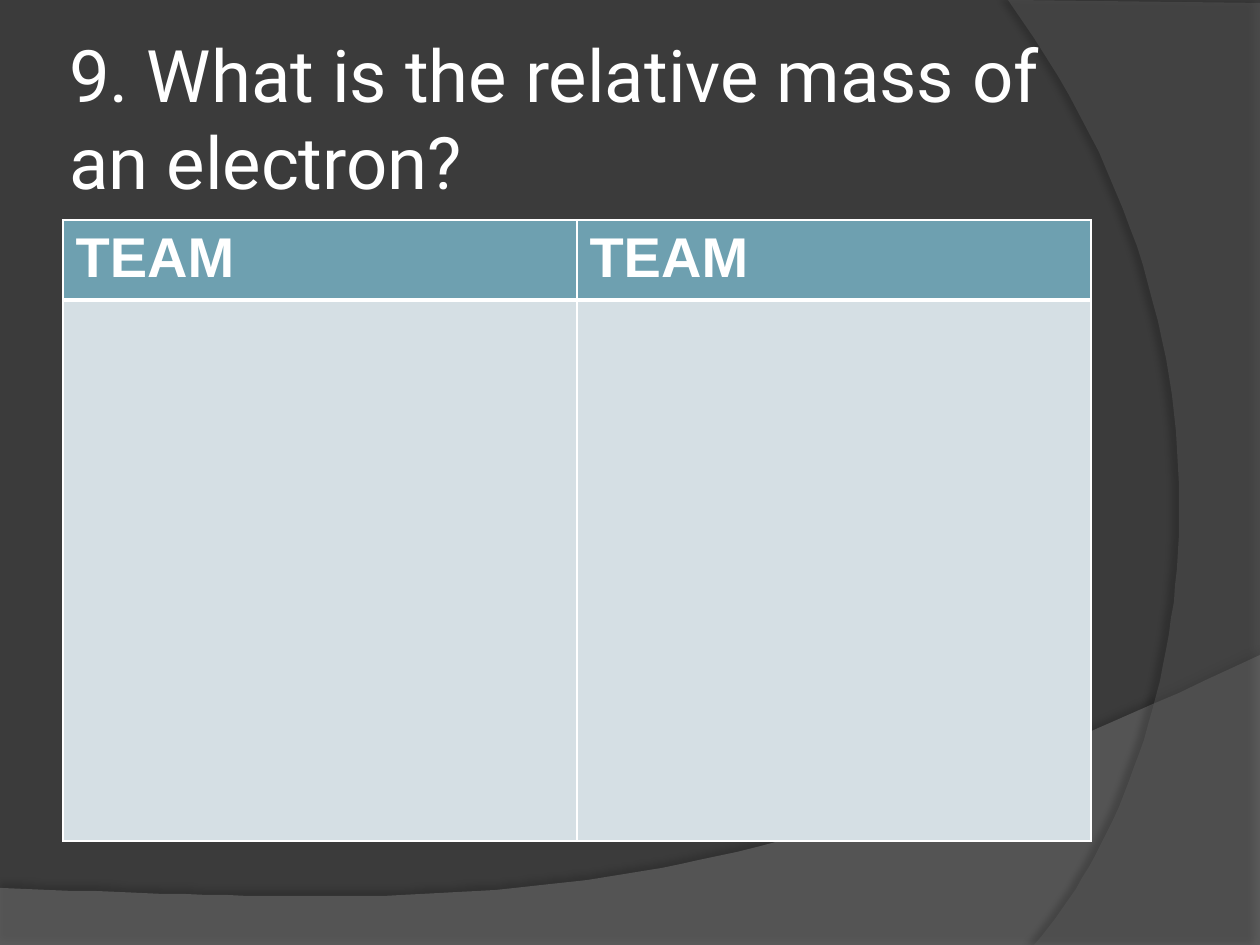
from dataclasses import dataclass

from lxml import etree
from pptx import Presentation
from pptx import util as u
from pptx.dml.color import RGBColor
from pptx.enum import text
from pptx.oxml import ns

EMU_PER_PX = 914400 / 126


@dataclass(frozen=True)
class Theme:
    background: str = "3B3B3B"
    wave: str = "7F7F7F"
    arc: str = "5E5E5E"
    shadow: str = "000000"
    white: str = "FFFFFF"
    header: str = "6EA0B0"
    body: str = "D5DFE4"
    title_font: str = "Roboto"
    table_font: str = "Arial"
    title_size: float = 41.4
    header_size: float = 32


THEME = Theme()


def px(length):
    return u.Emu(round(length * EMU_PER_PX))


def paint(fill, color):
    fill.solid()
    fill.fore_color.rgb = RGBColor.from_string(color)


def add_color(parent, color, alpha=100):
    element = etree.SubElement(parent, ns.qn("a:srgbClr"), val=color)
    etree.SubElement(element, ns.qn("a:alpha"), val=str(alpha * 1000))


def style_paragraph(paragraph, font_name, size, bold=False):
    font = paragraph.font
    font.name = font_name
    font.size = u.Pt(size)
    font.bold = bold
    font.color.rgb = RGBColor.from_string(THEME.white)


def bezier(start, control_1, control_2, end, steps=60):
    points = []
    for step in range(steps + 1):
        t = step / steps
        weights = ((1 - t) ** 3, 3 * t * (1 - t) ** 2, 3 * t ** 2 * (1 - t), t ** 3)
        corners = (start, control_1, control_2, end)
        points.append(tuple(
            round(sum(w * corner[axis] for w, corner in zip(weights, corners)), 2)
            for axis in (0, 1)
        ))
    return points


def add_backdrop(slide, points, color, alpha, shadow_alpha, distance, angle):
    builder = slide.shapes.build_freeform(*points[0], scale=EMU_PER_PX)
    builder.add_line_segments(points[1:], close=True)
    shape = builder.convert_to_shape()
    paint(shape.fill, color)
    shape.line.fill.background()
    shape.shadow.inherit = False
    properties = shape.element.spPr
    fill_color = properties.find(ns.qn("a:solidFill"))[0]
    etree.SubElement(fill_color, ns.qn("a:alpha"), val=str(alpha * 1000))
    shadow = etree.SubElement(
        properties.find(ns.qn("a:effectLst")), ns.qn("a:outerShdw"),
        blurRad=str(u.Pt(4)), dist=str(u.Pt(distance)),
        dir=str(angle * 60000), algn="ctr", rotWithShape="0",
    )
    add_color(shadow, THEME.shadow, shadow_alpha)


def add_title(slide, words, left, top, width, height):
    box = slide.shapes.add_textbox(px(left), px(top), px(width), px(height))
    frame = box.text_frame
    frame.word_wrap = True
    frame.vertical_anchor = text.MSO_ANCHOR.MIDDLE
    frame.margin_left = frame.margin_right = u.Inches(0.05)
    frame.margin_top = frame.margin_bottom = u.Inches(0.05)
    paragraph = frame.paragraphs[0]
    paragraph.text = words
    style_paragraph(paragraph, THEME.title_font, THEME.title_size)


def add_borders(cell, top, bottom):
    properties = cell._tc.get_or_add_tcPr()
    for side, width in (("L", 1), ("R", 1), ("T", top), ("B", bottom)):
        line = etree.SubElement(properties, ns.qn(f"a:ln{side}"), w=str(u.Pt(width)))
        add_color(etree.SubElement(line, ns.qn("a:solidFill")), THEME.white)


def add_team_table(slide, headings, left, top, column_width, row_heights):
    columns = len(headings)
    frame = slide.shapes.add_table(
        len(row_heights), columns, px(left), px(top),
        px(column_width * columns), px(sum(row_heights)),
    )
    table = frame.table
    for column in table.columns:
        column.width = px(column_width)
    for row, height in zip(table.rows, row_heights):
        row.height = px(height)
    for index, heading in enumerate(headings):
        header, body = table.cell(0, index), table.cell(1, index)
        add_borders(header, top=1, bottom=3)
        add_borders(body, top=3, bottom=1)
        paint(header.fill, THEME.header)
        paint(body.fill, THEME.body)
        paragraph = header.text_frame.paragraphs[0]
        paragraph.text = heading
        style_paragraph(paragraph, THEME.table_font, THEME.header_size, bold=True)


def main():
    presentation = Presentation()
    presentation.slide_width = px(1260)
    presentation.slide_height = px(945)
    slide = presentation.slides.add_slide(presentation.slide_layouts[6])
    paint(slide.background.fill, THEME.background)

    wave = [(0, 946), (1260, 946)] + bezier((1260, 655), (704, 919), (493, 906), (0, 888))
    arc = [(1260, 3), (1260, 945)] + bezier((1034, 945), (1178, 780), (1283, 378), (1008, 0))
    add_backdrop(slide, wave, THEME.wave, 45, shadow_alpha=35, distance=3.5, angle=270)
    add_backdrop(slide, arc, THEME.arc, 40, shadow_alpha=45, distance=4, angle=180)

    add_title(slide, "9. What is the relative mass of an electron?", 63, 38, 1029, 158)
    add_team_table(slide, ["TEAM", "TEAM"], 63, 220, 514, [76, 541])
    presentation.save("out.pptx")


if __name__ == "__main__":
    main()
